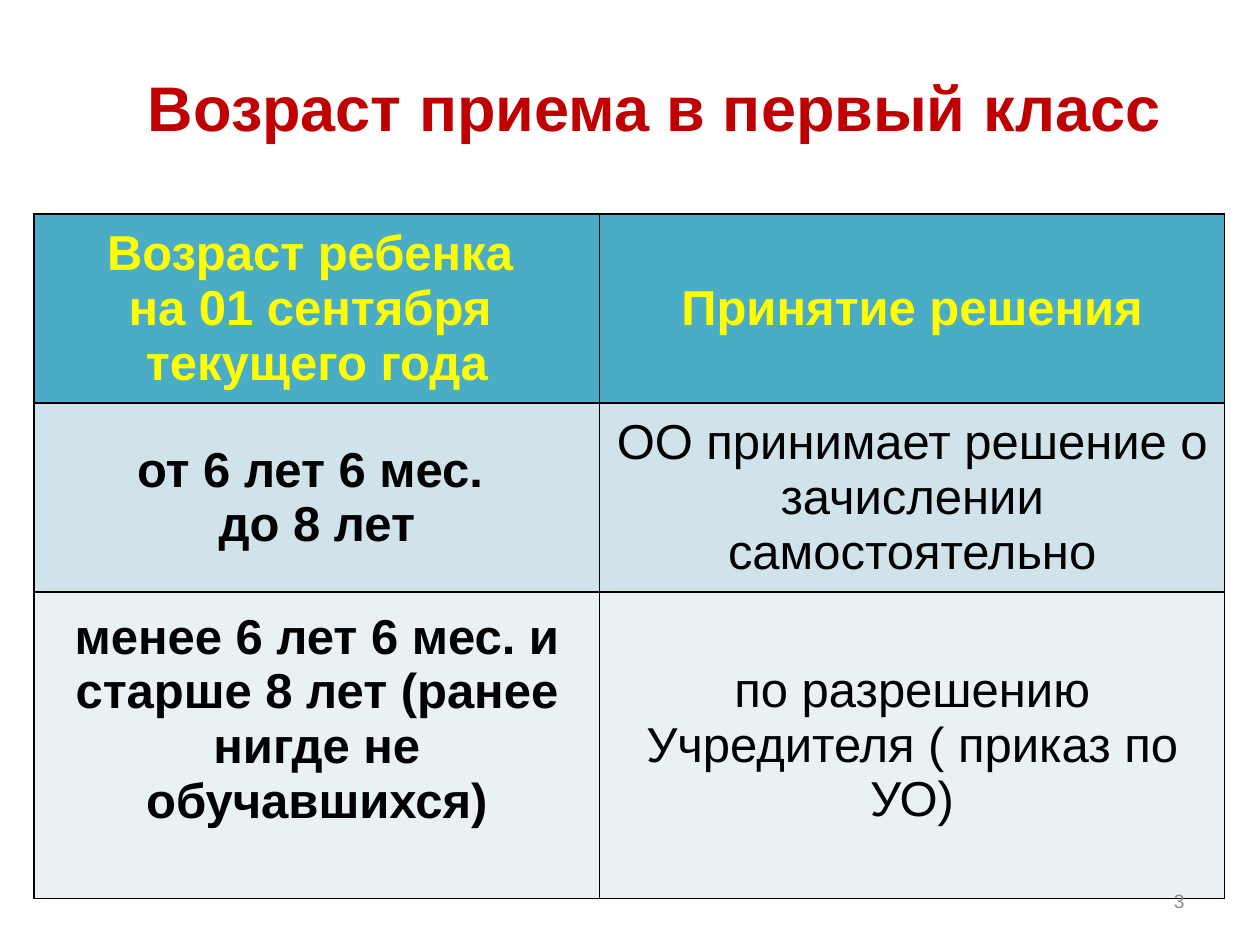
from lxml.etree import SubElement
from pptx import Presentation
from pptx.dml.color import RGBColor
from pptx.enum.text import MSO_ANCHOR as ANCHOR, PP_ALIGN as ALIGN
from pptx.oxml.ns import qn
from pptx.util import Inches, Pt

FONT = "Arial"
COLORS = {
    "title": "C00000",
    "header_text": "FFFF00",
    "body_text": "000000",
    "number": "898989",
    "border": "000000",
    "rows": ["4BACC6", "D0E3EA", "E9F1F5"],
}
ROWS = [
    ("Возраст ребенка \nна 01 сентября \nтекущего года", "Принятие решения"),
    ("от 6 лет 6 мес. \nдо 8 лет", "ОО принимает решение о зачислении самостоятельно"),
    ("менее 6 лет 6 мес. и старше 8 лет (ранее нигде не обучавшихся)",
     "по разрешению Учредителя ( приказ по УО)"),
]
COL_SHARES = [0.475, 0.525]
ROW_SHARES = [0.276, 0.276, 0.448]


def set_text(tf, text, size, color, bold=False, align=ALIGN.CENTER):
    tf.text = text
    tf.word_wrap = True
    tf.vertical_anchor = ANCHOR.MIDDLE
    for p in tf.paragraphs:
        p.alignment = align
        for r in p.runs:
            r.font.name = FONT
            r.font.size = Pt(size)
            r.font.bold = bold
            r.font.color.rgb = RGBColor.from_string(color)


def place(sp, left, top, width, height):
    sp.left, sp.top = Inches(left), Inches(top)
    sp.width, sp.height = Inches(width), Inches(height)


def add_title(slide, left, top, width, height):
    title = slide.shapes.title
    place(title, left, top, width, height)
    set_text(title.text_frame, "Возраст приема в первый класс", 36, COLORS["title"], True)


def set_borders(cell):
    tc_pr = cell._tc.get_or_add_tcPr()
    for i, side in enumerate(("lnL", "lnR", "lnT", "lnB")):
        ln = SubElement(tc_pr, qn(f"a:{side}"), w=str(Pt(1)))
        fill = SubElement(ln, qn("a:solidFill"))
        SubElement(fill, qn("a:srgbClr"), val=COLORS["border"])
        tc_pr.remove(ln)
        tc_pr.insert(i, ln)


def add_age_table(slide, left, top, width, height):
    frame = slide.shapes.add_table(len(ROWS), len(COL_SHARES), Inches(left), Inches(top),
                                   Inches(width), Inches(height))
    table = frame.table
    for col, share in zip(table.columns, COL_SHARES):
        col.width = Inches(width * share)
    for row, share in zip(table.rows, ROW_SHARES):
        row.height = Inches(height * share)
    for i, texts in enumerate(ROWS):
        for j, text in enumerate(texts):
            cell = table.cell(i, j)
            color = COLORS["body_text" if i else "header_text"]
            set_text(cell.text_frame, text, 28, color, i == 0 or j == 0)
            cell.vertical_anchor = ANCHOR.MIDDLE
            cell.fill.solid()
            cell.fill.fore_color.rgb = RGBColor.from_string(COLORS["rows"][i])
            set_borders(cell)
    table.cell(2, 0).margin_bottom = Inches(0.46)


def add_slide_number(slide, left, top, width, height):
    box = slide.shapes.add_textbox(Inches(left), Inches(top), Inches(width), Inches(height))
    set_text(box.text_frame, "3", 11, COLORS["number"], align=ALIGN.RIGHT)


def main():
    prs = Presentation()
    prs.slide_width, prs.slide_height = Inches(10), Inches(7.5)
    slide = prs.slides.add_slide(prs.slide_layouts[5])
    add_title(slide, 0.59, 0.44, 9.21, 0.8)
    add_age_table(slide, 0.27, 1.7, 9.45, 5.43)
    add_slide_number(slide, 7.17, 6.95, 2.33, 0.4)
    prs.save("out.pptx")


if __name__ == "__main__":
    main()
